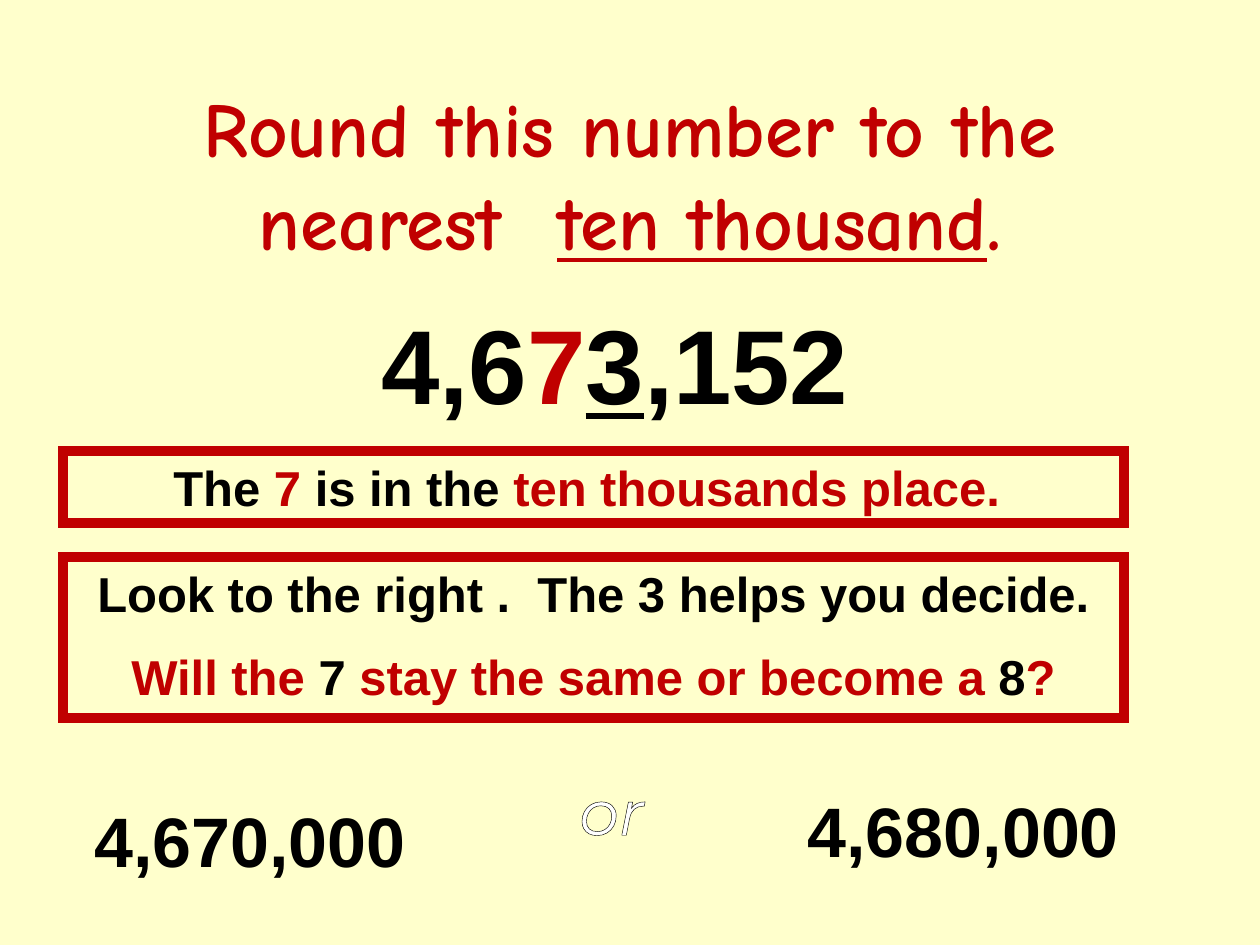
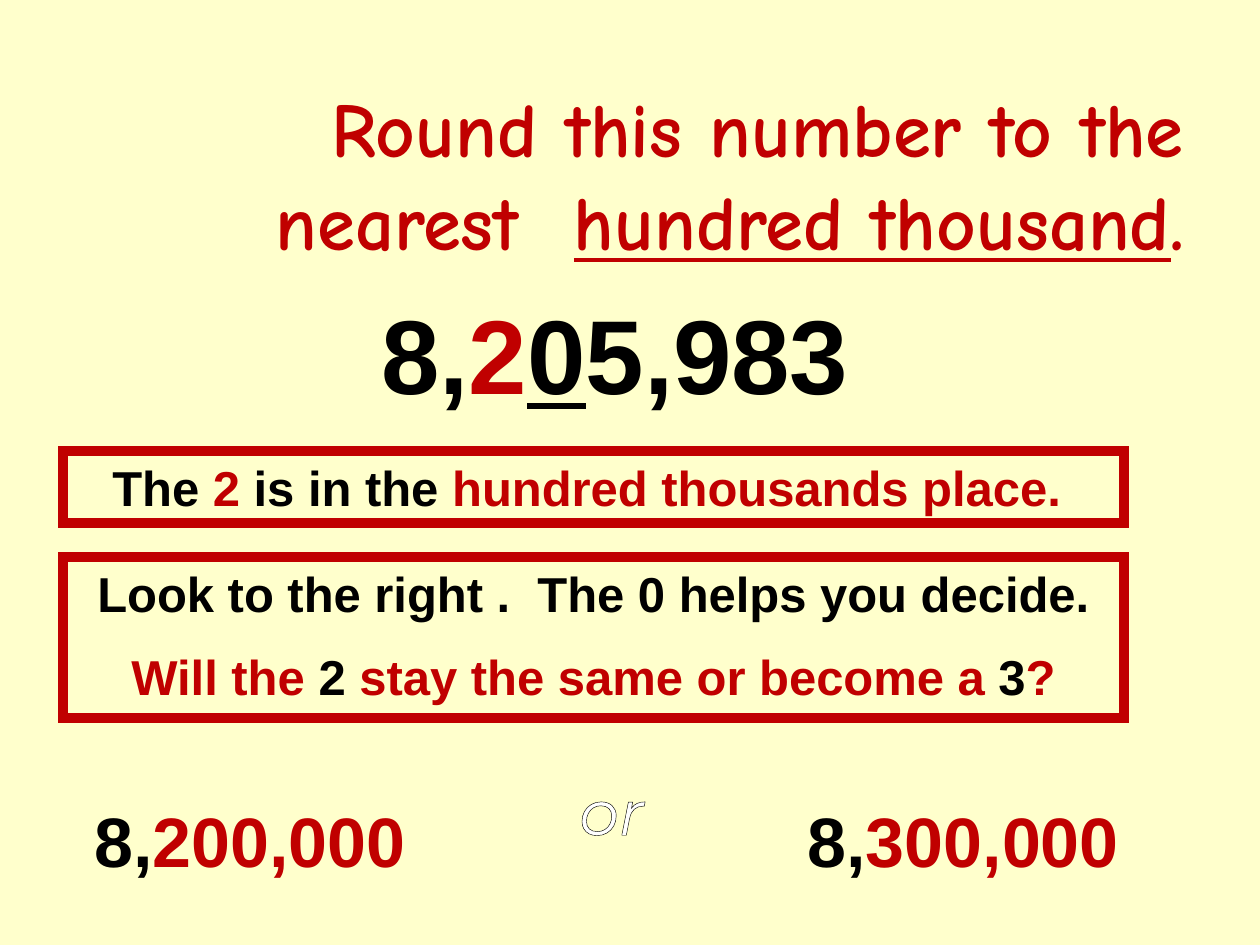
"""Build two practice slides on rounding large numbers."""
from lxml.etree import SubElement
from pptx import Presentation
from pptx.dml.color import RGBColor
from pptx.enum.shapes import MSO_SHAPE
from pptx.enum.text import MSO_ANCHOR, MSO_AUTO_SIZE, PP_ALIGN
from pptx.oxml.ns import qn
from pptx.util import Inches, Pt

COLORS = {"paper": "FFFFCC", "red": "C00000", "black": "000000", "white": "FFFFFF"}

FORMATS = {
    "title": {"name": "Comic Neue", "size": Pt(44), "bold": True},
    "number": {"name": "Arial", "size": Pt(60), "bold": True},
    "hint": {"name": "Arial", "size": Pt(28), "bold": True},
    "choice": {"name": "Arial", "size": Pt(40), "bold": True},
    "or": {"name": "Montserrat", "size": Pt(36), "italic": True},
}

PROBLEMS = [
    {
        "place": "ten thousand",
        "title_align": PP_ALIGN.CENTER,
        "number": ("4,6", "7", "3", ",152"),
        "next_digit": "8",
        "choices": [[("4,670,000", "black")], [("4,680,000", "black")]],
        "number_top": 2.33,
        "choice_areas": [(0.42, 6, 3, 1.11), (6.08, 5.92, 3.08, 1.11)],
    },
    {
        "place": "hundred thousand",
        "title_align": PP_ALIGN.RIGHT,
        "number": ("8,", "2", "0", "5,983"),
        "next_digit": "3",
        "choices": [
            [("8,", "black"), ("200,000", "red")],
            [("8,", "black"), ("300,000", "red")],
        ],
        "number_top": 2.25,
        "choice_areas": [(0.42, 6, 3, 1.11), (6.08, 6, 3, 1.11)],
    },
]


def add_span(para, style, text, color, underline=False):
    span = para.add_run()
    span.text = text
    for attribute, value in FORMATS[style].items():
        setattr(span.font, attribute, value)
    span.font.color.rgb = RGBColor.from_string(COLORS[color])
    if underline:
        span.font.underline = True
    return span


def fill_text(box, style, lines, align):
    frame = box.text_frame
    frame.word_wrap = True
    frame.vertical_anchor = MSO_ANCHOR.TOP
    for index, line in enumerate(lines):
        para = frame.add_paragraph() if index else frame.paragraphs[0]
        para.alignment = align
        if index:
            para.space_before = Pt(14)
        for part in line:
            add_span(para, style, *part)
    return frame


def add_text(page, area, style, line, align=PP_ALIGN.CENTER):
    box = page.shapes.add_textbox(*map(Inches, area))
    return fill_text(box, style, [line], align)


def add_hint(page, top, height, lines):
    box = page.shapes.add_shape(
        MSO_SHAPE.RECTANGLE, *map(Inches, (0.5, top, 8.42, height)))
    box.shadow.inherit = False
    box.fill.background()
    box.line.color.rgb = RGBColor.from_string(COLORS["red"])
    box.line.width = Pt(6)
    border = box._element.spPr.find(qn("a:ln"))
    SubElement(border, qn("a:miter"), lim="800000")
    fill_text(box, "hint", lines, PP_ALIGN.CENTER)


def add_or(page):
    frame = add_text(page, (4.58, 6.08, 0.55, 0.71), "or", [("or", "white")])
    frame.word_wrap = False
    frame.margin_left = frame.margin_right = 0
    properties = frame.paragraphs[0].runs[0].font._element
    outline = SubElement(properties, qn("a:ln"), w=str(Pt(0.75)))
    fill = SubElement(outline, qn("a:solidFill"))
    SubElement(fill, qn("a:srgbClr"), val=COLORS["black"])
    properties.insert(0, outline)


def add_choice(page, area, parts):
    frame = add_text(page, area, "number", [(" ", "black")], PP_ALIGN.LEFT)
    for part in parts:
        add_span(frame.paragraphs[0], "choice", *part)
    frame.auto_size = MSO_AUTO_SIZE.SHAPE_TO_FIT_TEXT


def add_problem(deck, problem):
    page = deck.slides.add_slide(deck.slide_layouts[6])
    page.background.fill.solid()
    page.background.fill.fore_color.rgb = RGBColor.from_string(COLORS["paper"])
    place = problem["place"]
    before, digit, helper, after = problem["number"]

    title = add_text(page, (0.5, 0.75, 9, 1.25), "title", [
        ("Round this number to the nearest  ", "red"),
        (place, "red", True), (".", "red"),
    ], problem["title_align"])
    title.vertical_anchor = MSO_ANCHOR.MIDDLE

    number = add_text(page, (1.67, problem["number_top"], 6.42, 1.11), "number", [
        (before, "black"), (digit, "red"), (helper, "black", True), (after, "black"),
    ])
    number.auto_size = MSO_AUTO_SIZE.SHAPE_TO_FIT_TEXT

    add_hint(page, 3.58, 0.57, [[
        ("The ", "black"), (digit, "red"), (" is in the ", "black"),
        (f"{place}s place. ", "red"),
    ]])
    add_hint(page, 4.42, 1.28, [
        [(f"Look to the right .  The {helper} helps you decide.", "black")],
        [("Will the ", "red"), (digit, "black"),
         (" stay the same or become a ", "red"),
         (problem["next_digit"], "black"), ("?", "red")],
    ])
    add_or(page)
    for area, parts in zip(problem["choice_areas"], problem["choices"]):
        add_choice(page, area, parts)


def main():
    deck = Presentation()
    deck.slide_width, deck.slide_height = Inches(10), Inches(7.5)
    for problem in PROBLEMS:
        add_problem(deck, problem)
    deck.save("out.pptx")


if __name__ == "__main__":
    main()
